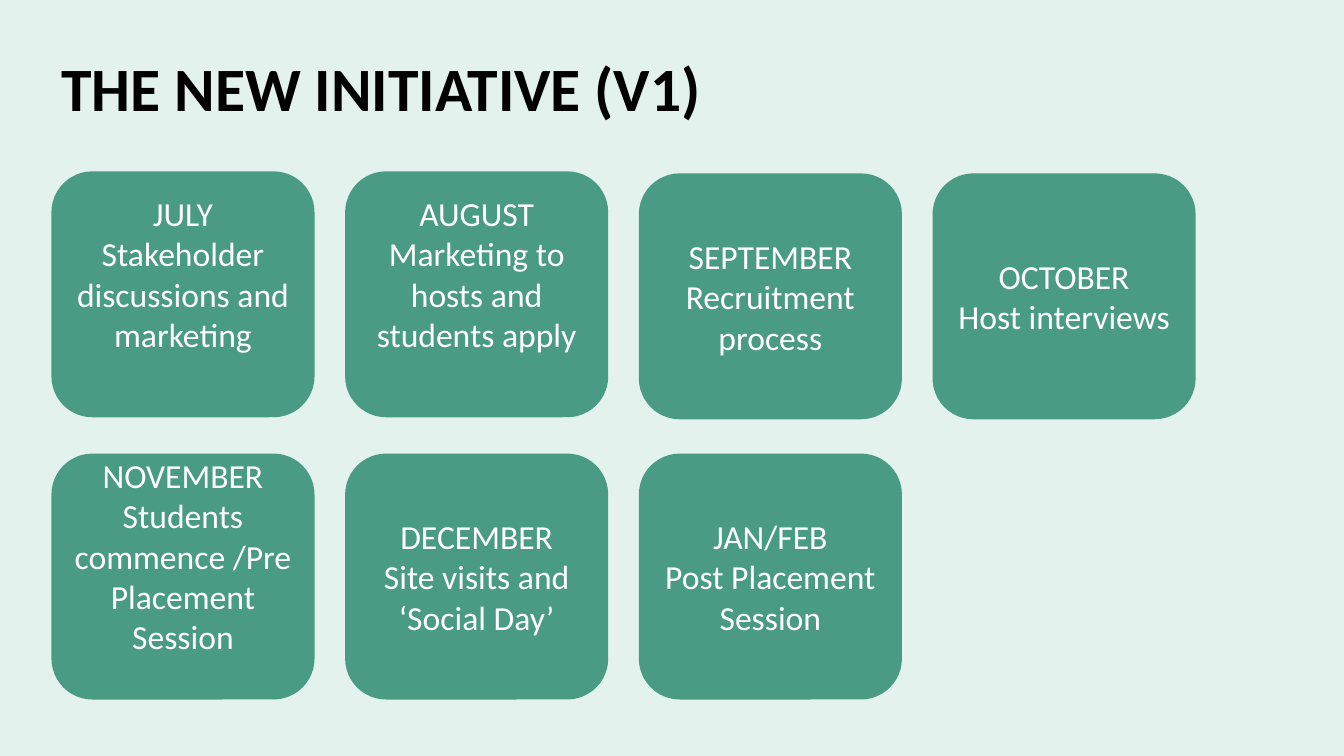
from pptx import Presentation
from pptx.dml.color import RGBColor
from pptx.enum.shapes import MSO_SHAPE
from pptx.enum.text import MSO_ANCHOR, PP_ALIGN
from pptx.util import Inches, Pt

ROUNDED = MSO_SHAPE.ROUNDED_RECTANGLE
MIDDLE = MSO_ANCHOR.MIDDLE
LEFT, CENTER = PP_ALIGN.LEFT, PP_ALIGN.CENTER

MINT = RGBColor(0xE3, 0xF2, 0xED)
GREEN = RGBColor(0x4A, 0x9B, 0x83)
BLACK = RGBColor(0, 0, 0)
WHITE = RGBColor(0xFF, 0xFF, 0xFF)

TITLE_FORMAT = {"name": "Calibri", "size": Pt(44), "bold": True}
CARD_FORMAT = {"name": "Calibri", "size": Pt(24), "bold": False}

MARGIN = 0.51
COLUMN_STEP = 2.913
COLUMNS = 4
CARD_WIDTH, CARD_HEIGHT = 2.61, 2.44
BASE_INSET, RAISED_INSET = 0.05, 0.46

MONTHS = [
    ("JULY", "Stakeholder discussions and marketing", 1.7, RAISED_INSET),
    ("AUGUST", "Marketing to hosts and students apply", 1.7, RAISED_INSET),
    ("SEPTEMBER", "Recruitment process", 1.72, BASE_INSET),
    ("OCTOBER", "Host interviews", 1.72, BASE_INSET),
    ("NOVEMBER", "Students commence /Pre Placement Session", 4.5, RAISED_INSET),
    ("DECEMBER", "Site visits and ‘Social Day’", 4.5, BASE_INSET),
    ("JAN/FEB", "Post Placement Session", 4.5, BASE_INSET),
]


def write_lines(box, lines, text_format, color, alignment):
    frame = box.text_frame
    frame.word_wrap = True
    frame.vertical_anchor = MIDDLE
    frame.text = "\n".join(lines)
    for para in frame.paragraphs:
        para.alignment = alignment
        for span in para.runs:
            for name, value in text_format.items():
                setattr(span.font, name, value)
            span.font.color.rgb = color


def add_title(page, text):
    box = page.shapes.add_textbox(
        Inches(MARGIN), Inches(0.37), Inches(8.98), Inches(0.98))
    write_lines(box, [text], TITLE_FORMAT, BLACK, LEFT)


def add_card(page, left, top, lines, bottom_inset):
    card = page.shapes.add_shape(
        ROUNDED, Inches(left), Inches(top), Inches(CARD_WIDTH), Inches(CARD_HEIGHT))
    card.shadow.inherit = False
    card.fill.solid()
    card.fill.fore_color.rgb = GREEN
    card.line.fill.background()
    card.text_frame.margin_bottom = Inches(bottom_inset)
    write_lines(card, lines, CARD_FORMAT, WHITE, CENTER)


def main():
    deck = Presentation()
    deck.slide_width, deck.slide_height = Inches(13.33), Inches(7.5)
    page = deck.slides.add_slide(deck.slide_layouts[6])
    page.background.fill.solid()
    page.background.fill.fore_color.rgb = MINT
    add_title(page, "THE NEW INITIATIVE (V1)")
    for index, (month, activity, top, bottom_inset) in enumerate(MONTHS):
        left = MARGIN + index % COLUMNS * COLUMN_STEP
        add_card(page, left, top, [month, activity], bottom_inset)
    deck.save("out.pptx")


if __name__ == "__main__":
    main()
